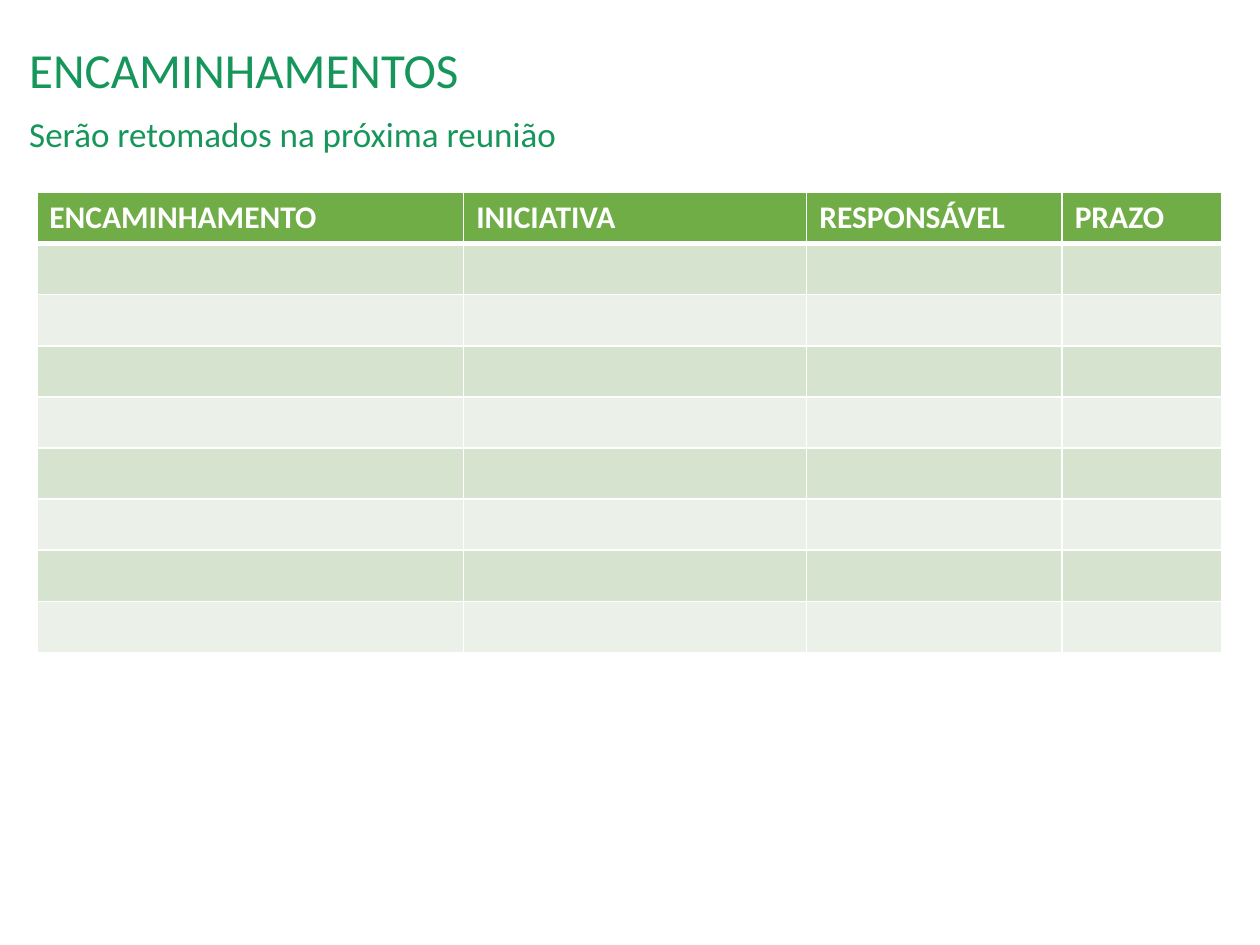
from lxml import etree
from pptx import Presentation
from pptx import util as u
from pptx.dml.color import RGBColor
from pptx.enum import text
from pptx.oxml import ns

HEADING = [("ENCAMINHAMENTOS", 28, 0), ("Serão retomados na próxima reunião", 20, 10)]
COLUMNS = [("ENCAMINHAMENTO", 244), ("INICIATIVA", 196), ("RESPONSÁVEL", 146), ("PRAZO", 91)]
EMPTY_ROWS = 8
ROW_HEIGHT = 29.2
COLORS = {
    "heading": "16965A",
    "header": "70AD47",
    "band_dark": "D5E3CF",
    "band_light": "EBF1E9",
    "white": "FFFFFF",
}
FONT = "Calibri"


def color(name):
    return RGBColor.from_string(COLORS[name])


def format_font(font, size, color_name, bold=False):
    font.name, font.size, font.bold = FONT, u.Pt(size), bold
    font.color.rgb = color(color_name)


def add_borders(cell, widths):
    properties = cell._tc.get_or_add_tcPr()
    for side, width in widths.items():
        line = etree.SubElement(properties, ns.qn(f"a:ln{side}"), w=str(u.Pt(width)))
        fill = etree.SubElement(line, ns.qn("a:solidFill"))
        etree.SubElement(fill, ns.qn("a:srgbClr"), val=COLORS["white"])


deck = Presentation()
deck.slide_width, deck.slide_height = u.Pt(720), u.Pt(540)
page = deck.slides.add_slide(deck.slide_layouts[5])

title = page.shapes.title
title.left, title.top, title.width, title.height = map(u.Pt, (9.5, 23, 710.5, 60.5))
frame = title.text_frame
frame.word_wrap = True
frame.auto_size = text.MSO_AUTO_SIZE.NONE
frame.vertical_anchor = text.MSO_ANCHOR.TOP
frame.text = "\n".join(line for line, _, _ in HEADING)
for para, (_, size, space) in zip(frame.paragraphs, HEADING):
    para.alignment = text.PP_ALIGN.LEFT
    para.line_spacing = 0.9
    para.space_before = u.Pt(space)
    format_font(para.runs[0].font, size, "heading")

row_count = EMPTY_ROWS + 1
table = page.shapes.add_table(
    row_count, len(COLUMNS), u.Pt(21), u.Pt(110),
    u.Pt(sum(width for _, width in COLUMNS)), u.Pt(ROW_HEIGHT * row_count),
).table
for column, (_, width) in zip(table.columns, COLUMNS):
    column.width = u.Pt(width)
for index, row in enumerate(table.rows):
    row.height = u.Pt(ROW_HEIGHT)
    band = "header" if index == 0 else ("band_light", "band_dark")[index % 2]
    for cell, (label, _) in zip(row.cells, COLUMNS):
        add_borders(cell, {"L": 1, "R": 1, "T": 3 if index == 1 else 1, "B": 3 if index == 0 else 1})
        cell.fill.solid()
        cell.fill.fore_color.rgb = color(band)
        if index == 0:
            cell.text_frame.text = label
            format_font(cell.text_frame.paragraphs[0].runs[0].font, 18, "white", True)

deck.save("out.pptx")
